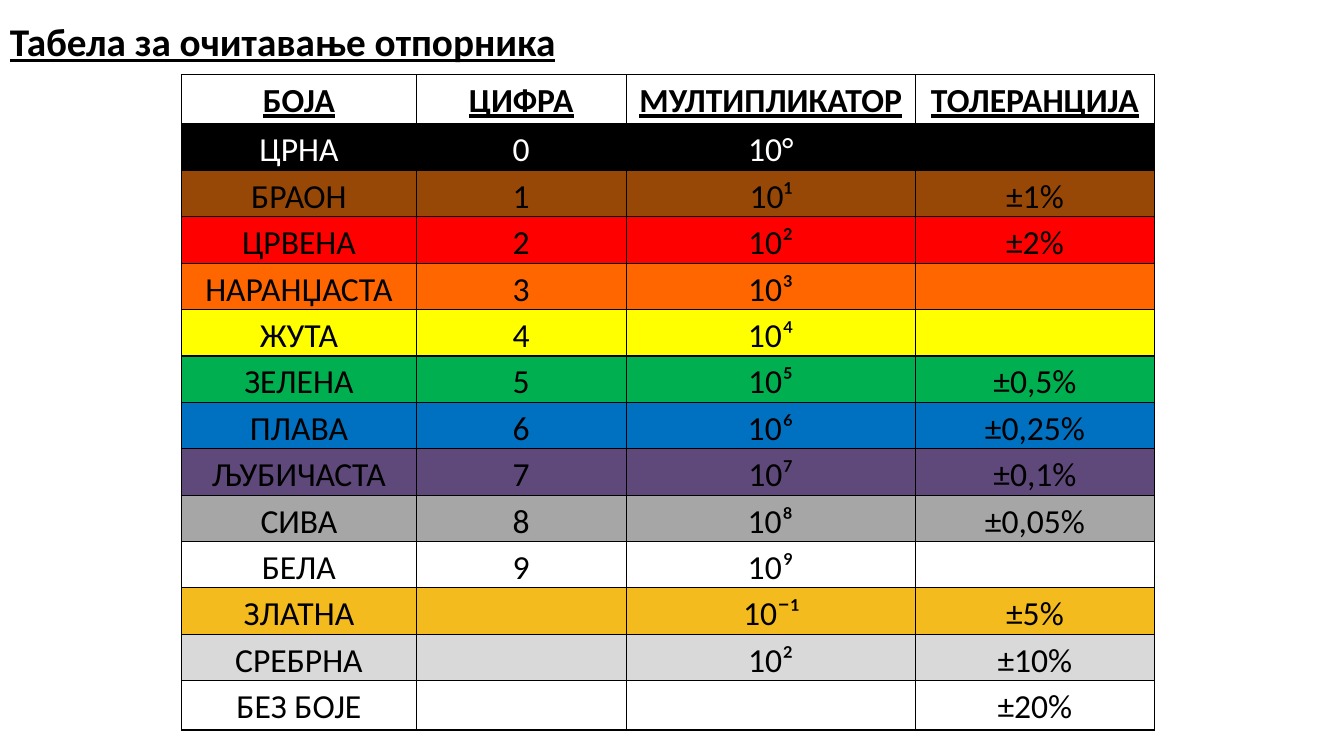
from lxml.etree import SubElement
from pptx import Presentation
from pptx.dml.color import RGBColor
from pptx.enum.text import MSO_ANCHOR, PP_ALIGN
from pptx.oxml.ns import qn
from pptx.util import Inches, Pt

COLORS = {
    "black": "000000", "brown": "984806", "red": "FF0000", "orange": "FF6600",
    "yellow": "FFFF00", "green": "00B050", "blue": "0070C0", "violet": "5F497A",
    "grey": "A6A6A6", "gold": "F3BB1D", "silver": "D9D9D9", "white": "FFFFFF",
}
COL_WIDTHS = [2.33, 2.08, 2.87, 2.37]
ROWS = [
    (None, "БОЈА", "ЦИФРА", "МУЛТИПЛИКАТОР", "ТОЛЕРАНЦИЈА"),
    ("black", "ЦРНА", "0", "10°", ""),
    ("brown", "БРАОН", "1", "10¹", "±1%"),
    ("red", "ЦРВЕНА", "2", "10²", "±2%"),
    ("orange", "НАРАНЏАСТА", "3", "10³", ""),
    ("yellow", "ЖУТА", "4", "10⁴", ""),
    ("green", "ЗЕЛЕНА", "5", "10⁵", "±0,5%"),
    ("blue", "ПЛАВА", "6", "10⁶", "±0,25%"),
    ("violet", "ЉУБИЧАСТА", "7", "10⁷", "±0,1%"),
    ("grey", "СИВА", "8", "10⁸", "±0,05%"),
    (None, "БЕЛА", "9", "10⁹", ""),
    ("gold", "ЗЛАТНА", "", "10¯¹", "±5%"),
    ("silver", "СРЕБРНА", "", "10²", "±10%"),
    (None, "БЕЗ БОЈЕ", "", "", "±20%"),
]


def write(tf, text, size=24, color="black", heading=False,
          align=PP_ALIGN.CENTER, spacing=1.15):
    p = tf.paragraphs[0]
    p.alignment = align
    p.line_spacing = spacing
    r = p.add_run()
    r.text = text
    r.font.name = "Calibri"
    r.font.size = Pt(size)
    r.font.bold = r.font.underline = heading
    r.font.color.rgb = RGBColor.from_string(COLORS[color])


def add_borders(cell):
    tcPr = cell._tc.get_or_add_tcPr()
    for side in ("lnL", "lnR", "lnT", "lnB"):
        ln = SubElement(tcPr, qn(f"a:{side}"), w=str(Pt(1)))
        fill = SubElement(ln, qn("a:solidFill"))
        SubElement(fill, qn("a:srgbClr"), val=COLORS["black"])


prs = Presentation()
prs.slide_width, prs.slide_height = Inches(13.33), Inches(7.5)
s = prs.slides.add_slide(prs.slide_layouts[6])

title = s.shapes.add_textbox(Inches(0), Inches(0.12), Inches(11.88), Inches(0.63))
tf = title.text_frame
tf.word_wrap = True
tf.vertical_anchor = MSO_ANCHOR.MIDDLE
write(tf, "Табела за очитавање отпорника", size=28, heading=True,
      align=PP_ALIGN.LEFT, spacing=0.9)

table = s.shapes.add_table(len(ROWS), len(COL_WIDTHS), Inches(1.8), Inches(0.74),
                           Inches(9.65), Inches(6.52)).table
table.first_row = table.horz_banding = False
for column, width in zip(table.columns, COL_WIDTHS):
    column.width = Inches(width)

for i, (band, *texts) in enumerate(ROWS):
    table.rows[i].height = Inches(0.49 if i in (0, len(ROWS) - 1) else 0.46)
    for j, text in enumerate(texts):
        cell = table.cell(i, j)
        cell.margin_left = cell.margin_right = Inches(0.07)
        cell.margin_top = cell.margin_bottom = 0
        add_borders(cell)
        if band:
            cell.fill.solid()
            cell.fill.fore_color.rgb = RGBColor.from_string(COLORS[band])
        else:
            cell.fill.background()
        if text:
            write(cell.text_frame, text, heading=i == 0,
                  color="white" if band == "black" else "black")

prs.save("out.pptx")
